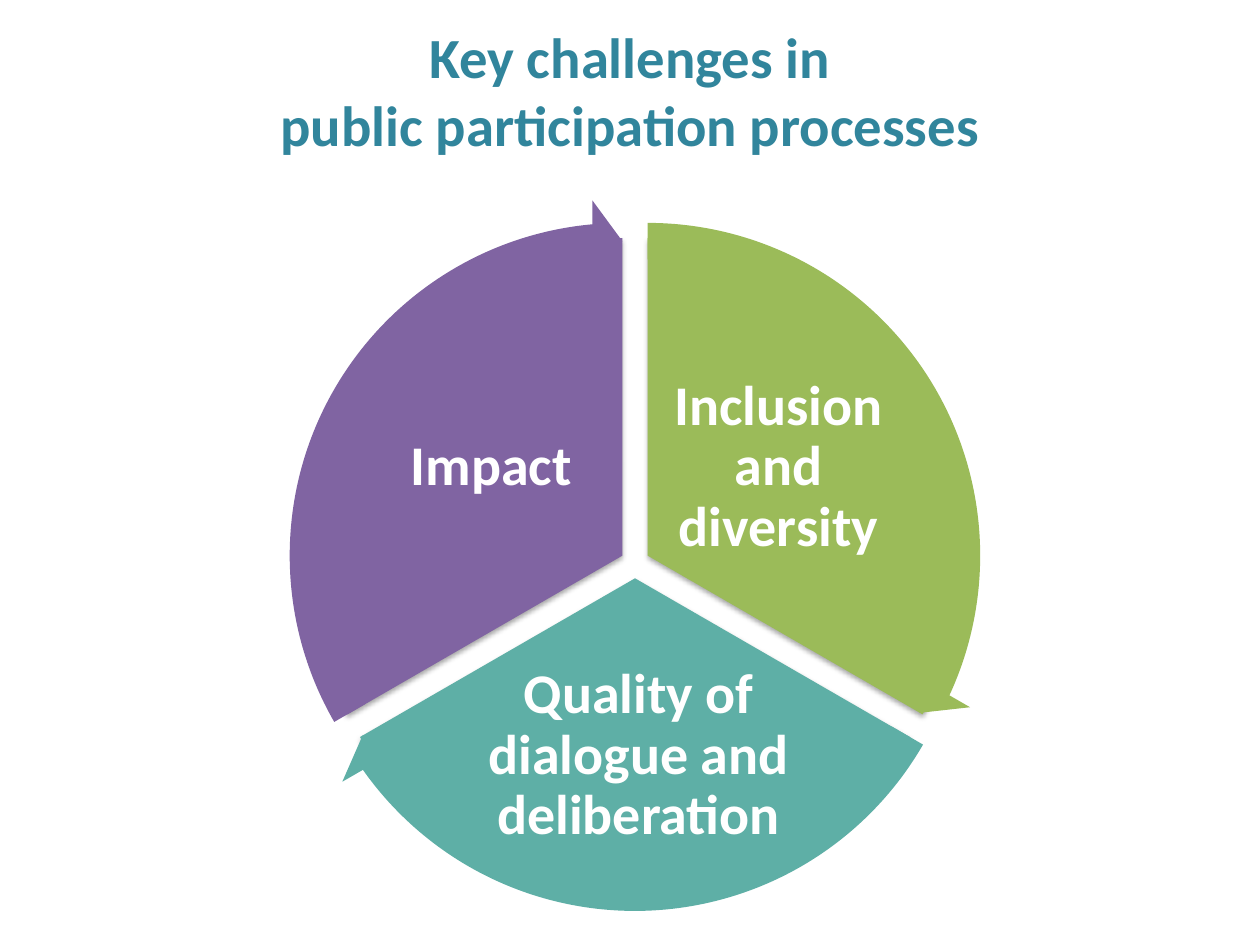
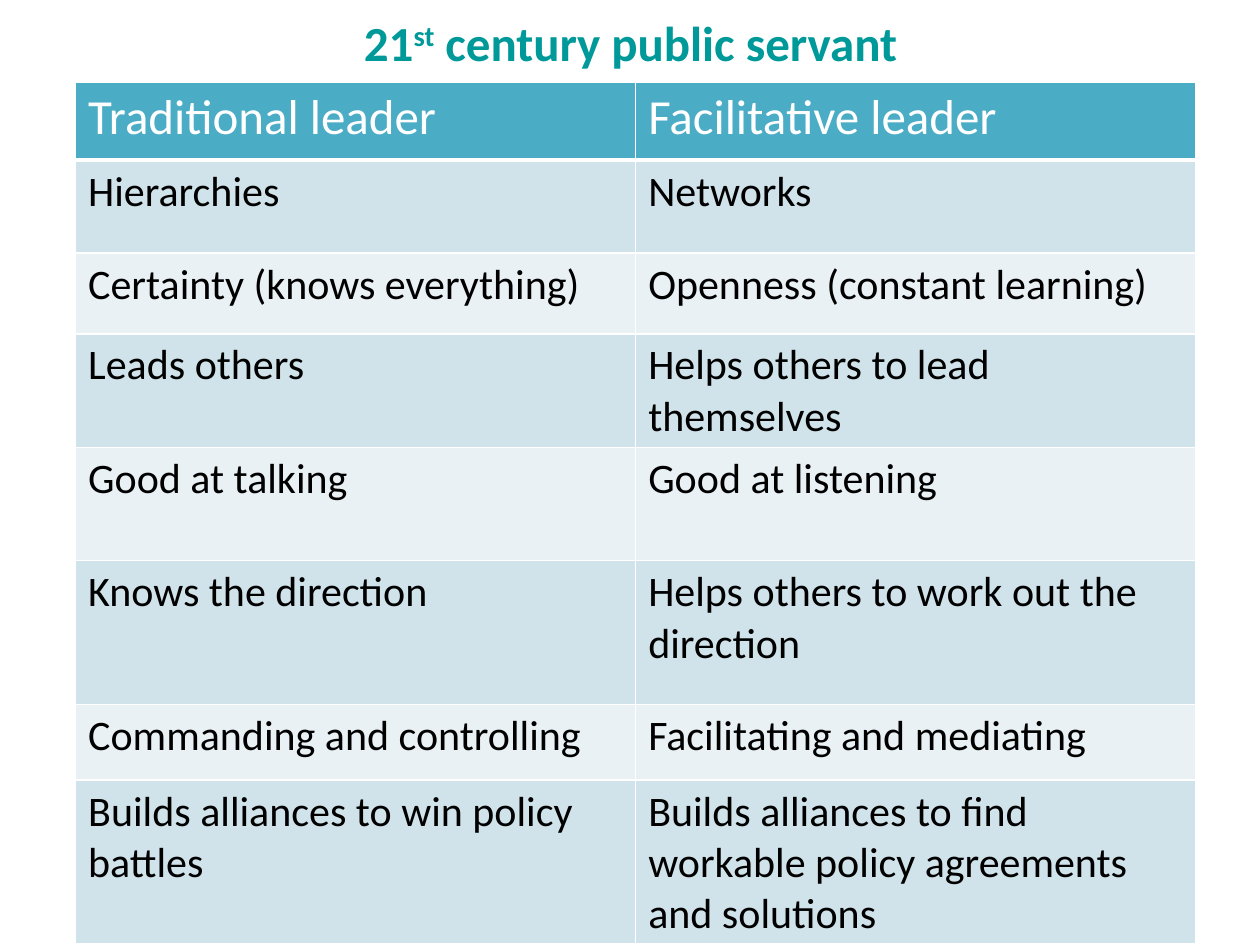
import pptx
import pptx.dml.color
import pptx.enum.shapes
import pptx.enum.text
import pptx.oxml
import pptx.util
from lxml import etree

RGB = pptx.dml.color.RGBColor
SHAPE = pptx.enum.shapes.MSO_SHAPE
ALIGN = pptx.enum.text.PP_ALIGN
ANCHOR = pptx.enum.text.MSO_ANCHOR

WHITE = RGB(0xFF, 0xFF, 0xFF)
BLACK = RGB(0x00, 0x00, 0x00)
TITLE_BLUE = RGB(0x31, 0x85, 0x9C)
TITLE_TEAL = RGB(0x00, 0x99, 0x99)
GREEN = RGB(0x9B, 0xBB, 0x59)
TEAL = RGB(0x5E, 0xAF, 0xA6)
PURPLE = RGB(0x80, 0x64, 0xA2)
HEADER = RGB(0x4B, 0xAC, 0xC6)
BAND_DARK = RGB(0xD0, 0xE3, 0xEA)
BAND_LIGHT = RGB(0xE9, 0xF1, 0xF5)

FONT = "Calibri"
EMU_PER_PX = 9144
A = "http://schemas.openxmlformats.org/drawingml/2006/main"

PIE_SIZE = 504
ARROW_MARGIN = 31
ARROW_HEAD = 3.275
SECTORS = [
    ("Inclusion and diversity", GREEN, (262, 189), (162, 18), (528, 296, 180, 150)),
    ("Quality of dialogue and deliberation", TEAL, (252, 207), (18, 90), (372, 534, 270, 132)),
    ("Impact", PURPLE, (242, 189), (90, 162), (300, 296, 180, 150)),
]
LEADERS = [
    (62, "Traditional leader", "Facilitative leader"),
    (74, "Hierarchies", "Networks"),
    (64, "Certainty (knows everything)", "Openness (constant learning)"),
    (71, "Leads others", "Helps others to lead themselves"),
    (90, "Good at talking", "Good at listening"),
    (114, "Knows the direction", "Helps others to work out the direction"),
    (60, "Commanding and controlling", "Facilitating and mediating"),
    (129, "Builds alliances to win policy battles",
     "Builds alliances to find workable policy agreements and solutions"),
]


def px(*lengths):
    return [pptx.util.Emu(n * EMU_PER_PX) for n in lengths]


class Deck:
    """Presentation with a shared style and a current slide."""

    def __init__(self):
        self.prs = pptx.Presentation()
        self.prs.slide_width, self.prs.slide_height = px(1000, 750)
        self.s = None

    def slide(self):
        self.s = self.prs.slides.add_slide(self.prs.slide_layouts[6])

    def run(self, p, text, size, color, bold=True, baseline=0):
        r = p.add_run()
        r.text = text
        r.font.name, r.font.size, r.font.bold = FONT, pptx.util.Pt(size), bold
        r.font.color.rgb = color
        if baseline:
            r._r.get_or_add_rPr().set("baseline", str(baseline * 1000))

    def text(self, box, anchor=ANCHOR.MIDDLE, align=ALIGN.CENTER, wrap=True, inset=None):
        tf = self.s.shapes.add_textbox(*px(*box)).text_frame
        tf.word_wrap, tf.vertical_anchor = wrap, anchor
        if inset is not None:
            tf.margin_left = tf.margin_top = tf.margin_right = tf.margin_bottom = px(inset)[0]
        p = tf.paragraphs[0]
        p.alignment = align
        return p

    def shape(self, kind, box, color, adjustments, shadow=False):
        sp = self.s.shapes.add_shape(kind, *px(*box))
        for i, value in enumerate(adjustments):
            sp.adjustments[i] = value
        sp.fill.solid()
        sp.fill.fore_color.rgb = color
        sp.line.fill.background()
        sp.shadow.inherit = False
        if shadow:
            effects = sp._element.spPr.find(f"{{{A}}}effectLst")
            effects.append(pptx.oxml.parse_xml(
                f'<a:outerShdw xmlns:a="{A}" blurRad="39370" dist="22860" dir="5400000" '
                'rotWithShape="0"><a:srgbClr val="000000"><a:alpha val="35000"/>'
                '</a:srgbClr></a:outerShdw>'))

    def cell(self, cell, text, size, color, fill, bottom):
        tcPr = cell._tc.get_or_add_tcPr()
        for side, width in (("L", 1), ("R", 1), ("T", 1), ("B", bottom)):
            ln = etree.SubElement(tcPr, f"{{{A}}}ln{side}", w=str(width * 12700))
            solid = etree.SubElement(ln, f"{{{A}}}solidFill")
            etree.SubElement(solid, f"{{{A}}}srgbClr", val=str(WHITE))
        cell.fill.solid()
        cell.fill.fore_color.rgb = fill
        self.run(cell.text_frame.paragraphs[0], text, size, color, bold=False)

    def table(self, left, top, width, rows):
        height = sum(row[0] for row in rows)
        frame = self.s.shapes.add_table(len(rows), 2, *px(left, top, width, height))
        for i, (row_height, *texts) in enumerate(rows):
            frame.table.rows[i].height = px(row_height)[0]
            if i == 0:
                style = 28, WHITE, HEADER, 3
            else:
                style = 24, BLACK, BAND_DARK if i % 2 else BAND_LIGHT, 1
            for j, text in enumerate(texts):
                self.cell(frame.table.cell(i, j), text, *style)


def challenges(deck):
    deck.slide()
    p = deck.text((50, 17, 900, 108))
    deck.run(p, "Key challenges in", 32.4, TITLE_BLUE)
    p.add_line_break()
    deck.run(p, "public participation processes", 32.4, TITLE_BLUE)
    for label, color, corner, angles, label_box in SECTORS:
        deck.shape(SHAPE.PIE, (*corner, PIE_SIZE, PIE_SIZE), color, angles, shadow=True)
        p = deck.text(label_box, inset=4)
        p.line_spacing = 0.9
        deck.run(p, label, 32, WHITE)
    arrow_size = PIE_SIZE + 2 * ARROW_MARGIN
    for _, color, (left, top), (start, end), _ in SECTORS:
        box = left - ARROW_MARGIN, top - ARROW_MARGIN, arrow_size, arrow_size
        deck.shape(SHAPE.CIRCULAR_ARROW, box, color,
                   (0.051, ARROW_HEAD, end - ARROW_HEAD, start, 0.059))


def leaders(deck):
    deck.slide()
    deck.table(60, 65, 889, LEADERS)
    p = deck.text((279, 5, 451, 57), ANCHOR.TOP, ALIGN.LEFT, wrap=False)
    for text, baseline in (("21", 0), ("st", 30), (" century public servant", 0)):
        deck.run(p, text, 28, TITLE_TEAL, baseline=baseline)


def main():
    deck = Deck()
    challenges(deck)
    leaders(deck)
    deck.prs.save("out.pptx")


if __name__ == "__main__":
    main()
